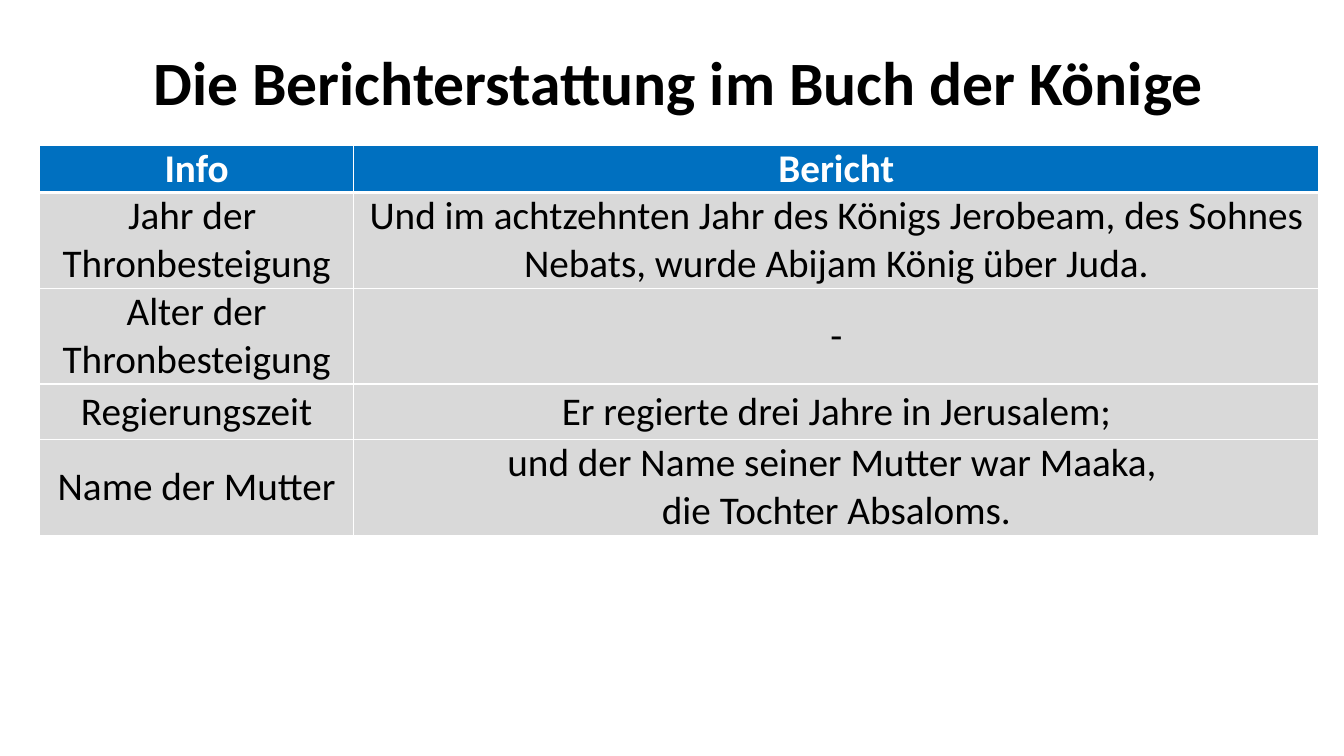
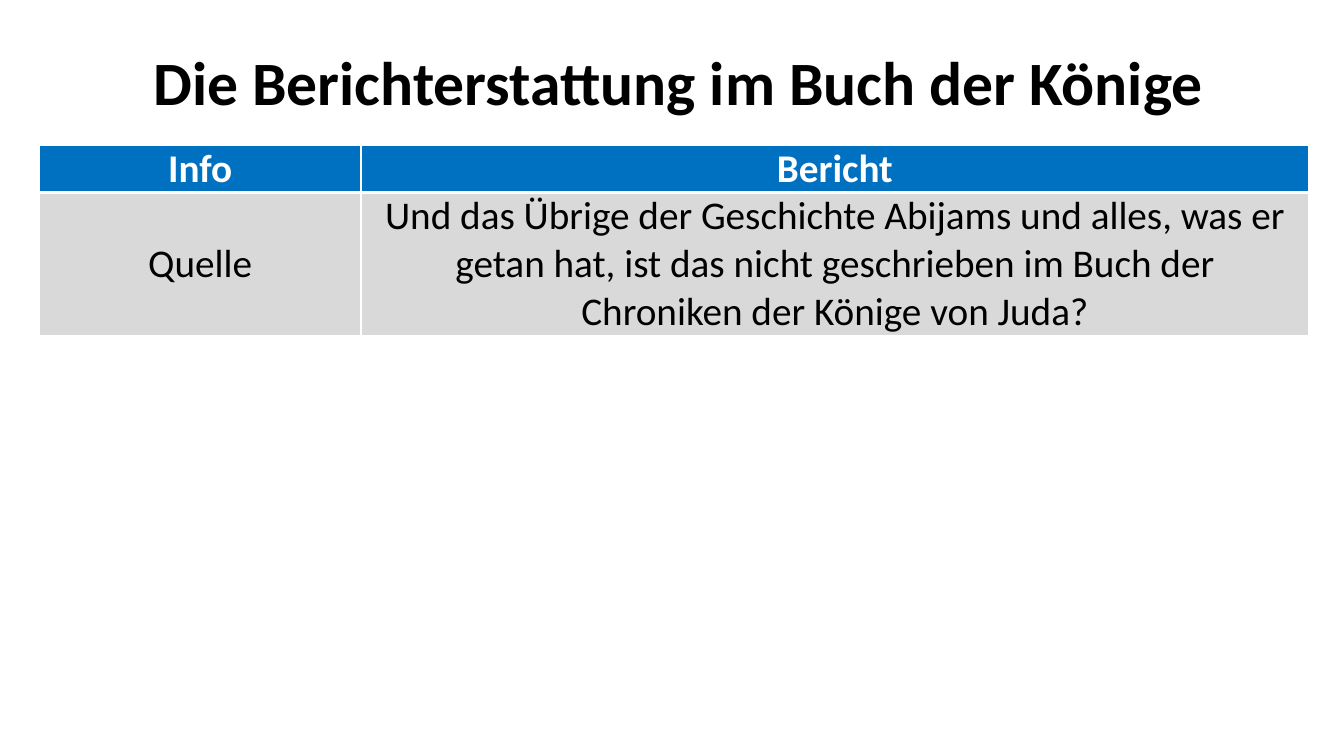
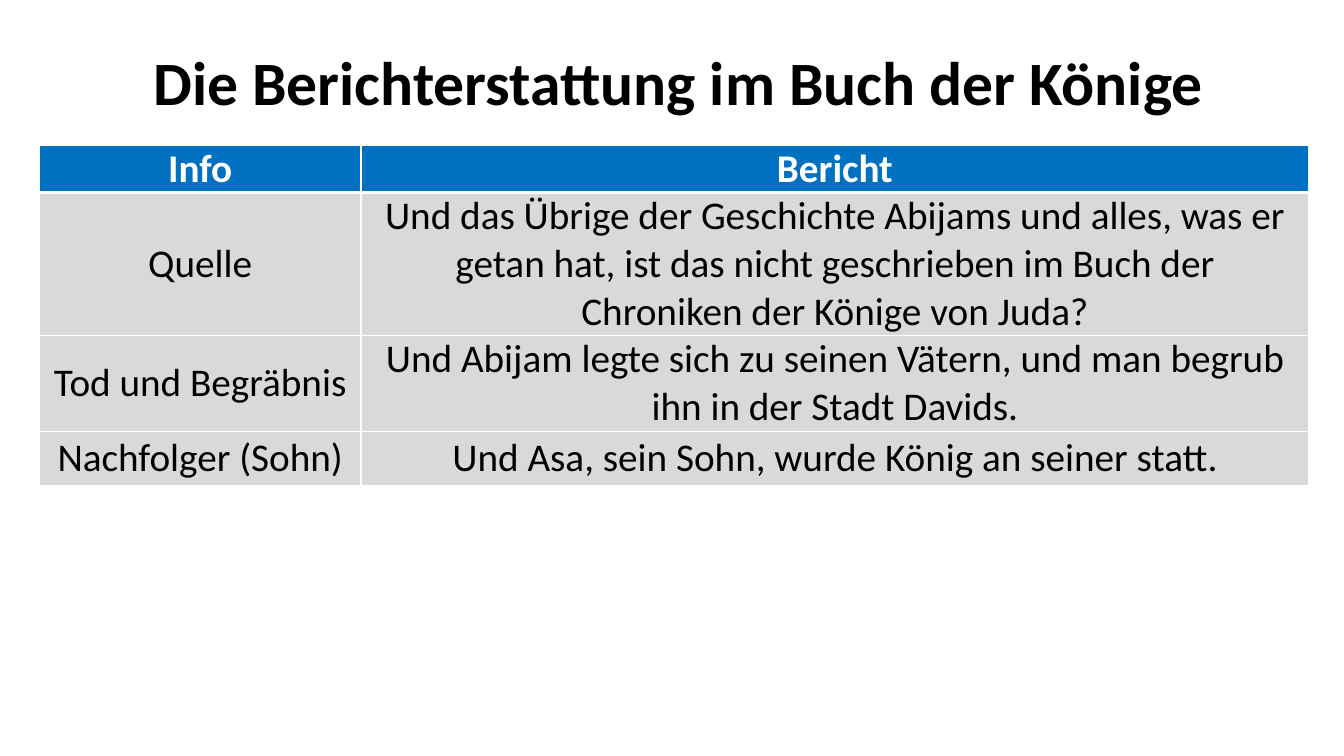
from lxml import etree
from pptx import Presentation
from pptx import util as u
from pptx.dml.color import RGBColor
from pptx.enum import text
from pptx.oxml.ns import qn

# Shared look
PX = 9144  # 100 px to the inch
BLACK = RGBColor(0x00, 0x00, 0x00)
WHITE = RGBColor(0xFF, 0xFF, 0xFF)
BLUE = RGBColor(0x00, 0x70, 0xC0)
GREY = RGBColor(0xD9, 0xD9, 0xD9)
FONT = "Calibri"
TITLE = "Die Berichterstattung im Buch der Könige"
TITLE_BOX = (32, 40, 1283, 89)
TABLE_LEFT, TABLE_TOP = 39, 144
CELL_MARGIN = 14
THIN, THICK = 1, 3  # border widths in points
HEADER = ("Info", "Bericht", 47)

# Rows: info, report, height
ACCESSION = [
    ("Jahr der \nThronbesteigung",
     "Und im achtzehnten Jahr des Königs Jerobeam, des Sohnes Nebats, "
     "wurde Abijam König über Juda.", 95),
    ("Alter der Thronbesteigung", "-", 95),
    ("Regierungszeit", "Er regierte drei Jahre in Jerusalem;", 55),
    ("Name der Mutter",
     "und der Name seiner Mutter war Maaka, \ndie Tochter Absaloms.", 95),
]
SOURCE = [
    ("Quelle",
     "Und das Übrige der Geschichte Abijams und alles, was er getan hat, "
     "ist das nicht geschrieben im Buch der Chroniken der Könige von Juda?", 142),
]
DEATH = [
    ("Tod und Begräbnis",
     "Und Abijam legte sich zu seinen Vätern, und man begrub ihn "
     "in der Stadt Davids.", 95),
    ("Nachfolger (Sohn)", "Und Asa, sein Sohn, wurde König an seiner statt.", 54),
]


def px(*lengths):
    return [u.Emu(length * PX) for length in lengths]


def style_text(frame, size, color, bold):
    for paragraph in frame.paragraphs:
        paragraph.alignment = text.PP_ALIGN.CENTER
        font = paragraph.font
        font.name, font.size, font.bold = FONT, u.Pt(size), bold
        font.color.rgb = color


def set_borders(cell, top, bottom):
    properties = cell._tc.get_or_add_tcPr()
    widths = {"a:lnL": THIN, "a:lnR": THIN, "a:lnT": top, "a:lnB": bottom}
    for index, (tag, width) in enumerate(widths.items()):
        line = etree.Element(qn(tag), w=str(u.Pt(width)))
        fill = etree.SubElement(line, qn("a:solidFill"))
        etree.SubElement(fill, qn("a:srgbClr"), val=str(WHITE))
        properties.insert(index, line)


def add_title(slide):
    frame = slide.shapes.add_textbox(*px(*TITLE_BOX)).text_frame
    frame.word_wrap = True
    frame.vertical_anchor = text.MSO_ANCHOR.MIDDLE
    frame.text = TITLE
    frame.paragraphs[0].line_spacing = 0.9
    style_text(frame, 44, BLACK, True)


def fill_cell(cell, content, row_index):
    is_header = row_index == 0
    cell.text = content
    cell.vertical_anchor = text.MSO_ANCHOR.MIDDLE
    cell.margin_left = cell.margin_right = u.Emu(CELL_MARGIN * PX)
    cell.margin_top = cell.margin_bottom = 0
    cell.fill.solid()
    cell.fill.fore_color.rgb = BLUE if is_header else GREY
    style_text(cell.text_frame, 28, WHITE if is_header else BLACK, is_header)
    set_borders(cell, THICK if row_index == 1 else THIN,
                THICK if is_header else THIN)


def add_report_table(slide, widths, body):
    rows = [HEADER, *body]
    height = sum(row[-1] for row in rows)
    table = slide.shapes.add_table(
        len(rows), len(widths),
        *px(TABLE_LEFT, TABLE_TOP, sum(widths), height)).table
    table.horz_banding = False
    for column, width in zip(table.columns, px(*widths)):
        column.width = width
    for row_index, (*contents, row_height) in enumerate(rows):
        table.rows[row_index].height = u.Emu(row_height * PX)
        for column_index, content in enumerate(contents):
            fill_cell(table.cell(row_index, column_index), content, row_index)


def main():
    presentation = Presentation()
    presentation.slide_width, presentation.slide_height = px(1333, 750)
    for widths, body in [
        ((312, 957), ACCESSION),
        ((319, 940), SOURCE),
        ((319, 940), SOURCE + DEATH),
    ]:
        slide = presentation.slides.add_slide(presentation.slide_layouts[6])
        add_title(slide)
        add_report_table(slide, widths, body)
    presentation.save("out.pptx")


if __name__ == "__main__":
    main()
